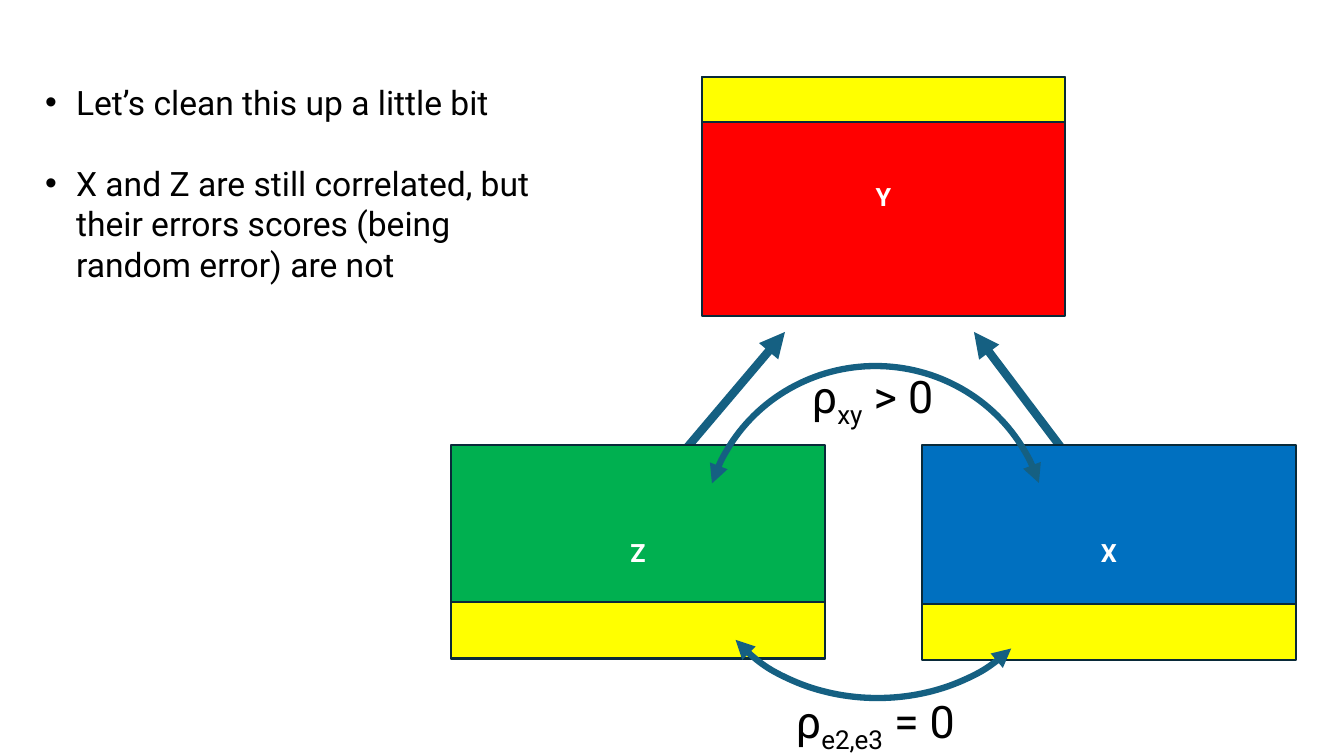
from lxml import etree
from pptx import Presentation
from pptx import util as u
from pptx.dml.color import RGBColor
from pptx.enum import shapes, text
from pptx.oxml import ns

SCALE = 914400 / 100.8
FONT = "Roboto"
COLOURS = {
    "outcome": "FF0000", "left": "00B050", "right": "0070C0", "error": "FFFF00",
    "outline": "092A39", "arrow": "156082", "ink": "000000", "label": "FFFFFF",
}


def px(length):
    return u.Emu(round(length * SCALE))


def colour(name):
    return RGBColor.from_string(COLOURS[name])


def add_xml(parent, tag, **attributes):
    return etree.SubElement(parent, ns.qn(tag), attributes)


def write(para, wording, size=24, ink="ink", bold=False, baseline=0):
    span = para.add_run()
    span.text = wording
    span.font.name, span.font.size, span.font.bold = FONT, u.Pt(size), bold
    span.font.color.rgb = colour(ink)
    if baseline:
        span._r.get_or_add_rPr().set("baseline", str(baseline * 1000))


def style_arrow(arrow, width, ends):
    arrow.line.color.rgb = colour("arrow")
    arrow.line.width = u.Pt(width)
    for end in ends:
        add_xml(arrow.line._get_or_add_ln(), end, type="triangle")


def add_rectangle(page, box, fill):
    rectangle = page.shapes.add_shape(shapes.MSO_SHAPE.RECTANGLE, *map(px, box))
    rectangle.shadow.inherit = False
    rectangle.fill.solid()
    rectangle.fill.fore_color.rgb = colour(fill)
    rectangle.line.color.rgb = colour("outline")
    rectangle.line.width = u.Pt(1.5)
    return rectangle


def add_variable(page, box, label, fill, band_top, band_height):
    """A labelled box with a yellow band for its error variance."""
    left, top, width, height = box
    frame = add_rectangle(page, box, fill).text_frame
    frame.vertical_anchor = text.MSO_ANCHOR.MIDDLE
    para = frame.paragraphs[0]
    para.alignment = text.PP_ALIGN.CENTER
    write(para, label, size=18, ink="label", bold=True)
    add_rectangle(page, (left, top + band_top, width, band_height), "error")


def add_straight_arrow(page, start, end):
    arrow = page.shapes.add_connector(
        shapes.MSO_CONNECTOR.STRAIGHT, *map(px, start + end))
    style_arrow(arrow, 6, ["a:tailEnd"])
    add_xml(arrow._element.spPr, "a:effectLst")


def add_curved_arrow(page, box, angles, rotation=0):
    arc = page.shapes.add_shape(shapes.MSO_SHAPE.ARC, *map(px, box))
    arc.shadow.inherit = False
    arc.fill.background()
    arc.adjustments[0], arc.adjustments[1] = angles
    arc.rotation = rotation
    style_arrow(arc, 4.5, ["a:headEnd", "a:tailEnd"])


def add_correlation(page, box, subscript, relation):
    frame = page.shapes.add_textbox(*map(px, box)).text_frame
    frame.word_wrap = False
    para = frame.paragraphs[0]
    write(para, "ρ", size=32)
    write(para, subscript, size=32, baseline=-25)
    write(para, relation, size=32)


def fill_body(body, box, points):
    body.left, body.top, body.width, body.height = map(px, box)
    frame = body.text_frame
    frame.word_wrap = True
    frame.auto_size = text.MSO_AUTO_SIZE.NONE
    frame.vertical_anchor = text.MSO_ANCHOR.TOP
    for index, point in enumerate(points):
        para = frame.add_paragraph() if index else frame.paragraphs[0]
        properties = para._p.get_or_add_pPr()
        properties.set("marL", str(px(31)))
        properties.set("indent", str(-px(31)))
        add_xml(properties, "a:buFont", typeface="Arial")
        add_xml(properties, "a:buChar", char="•")
        para.space_before = u.Pt(29 if index else 0)
        write(para, point)


def build_diagram(page, box):
    left, top = box

    def place(x, y, *size):
        return (left + x, top + y, *size)

    # Paths from the predictors to the outcome
    add_straight_arrow(page, place(652, 426), place(523, 255))
    add_straight_arrow(page, place(195, 419), place(334, 255))

    # Variables and their error bands
    add_variable(page, place(251, 0, 363, 239), "Y", "outcome", 0, 45)
    add_variable(page, place(471, 368, 374, 214), "X", "right", 159, 56)
    add_variable(page, place(0, 368, 374, 214), "Z", "left", 157, 56)

    # Correlations of the scores and of the errors
    add_curved_arrow(page, place(253, 289, 343, 336), (118.3, 205.59))
    add_correlation(page, place(351, 287, 149, 65), "xy", " > 0")
    add_correlation(page, place(335, 612, 196, 65), "e2,e3", " = 0")
    add_curved_arrow(page, place(255, 356, 343, 265), (127.1, 199.42), rotation=180)


def main():
    deck = Presentation()
    deck.slide_width, deck.slide_height = px(1344), px(756)
    page = deck.slides.add_slide(deck.slide_layouts[1])
    title = page.shapes.title._element
    title.getparent().remove(title)
    fill_body(page.placeholders[1], (35, 77, 542, 214), [
        "Let’s clean this up a little bit",
        "X and Z are still correlated, but their errors scores "
        "(being random error) are not",
    ])
    build_diagram(page, (451, 77))
    deck.save("out.pptx")


if __name__ == "__main__":
    main()
